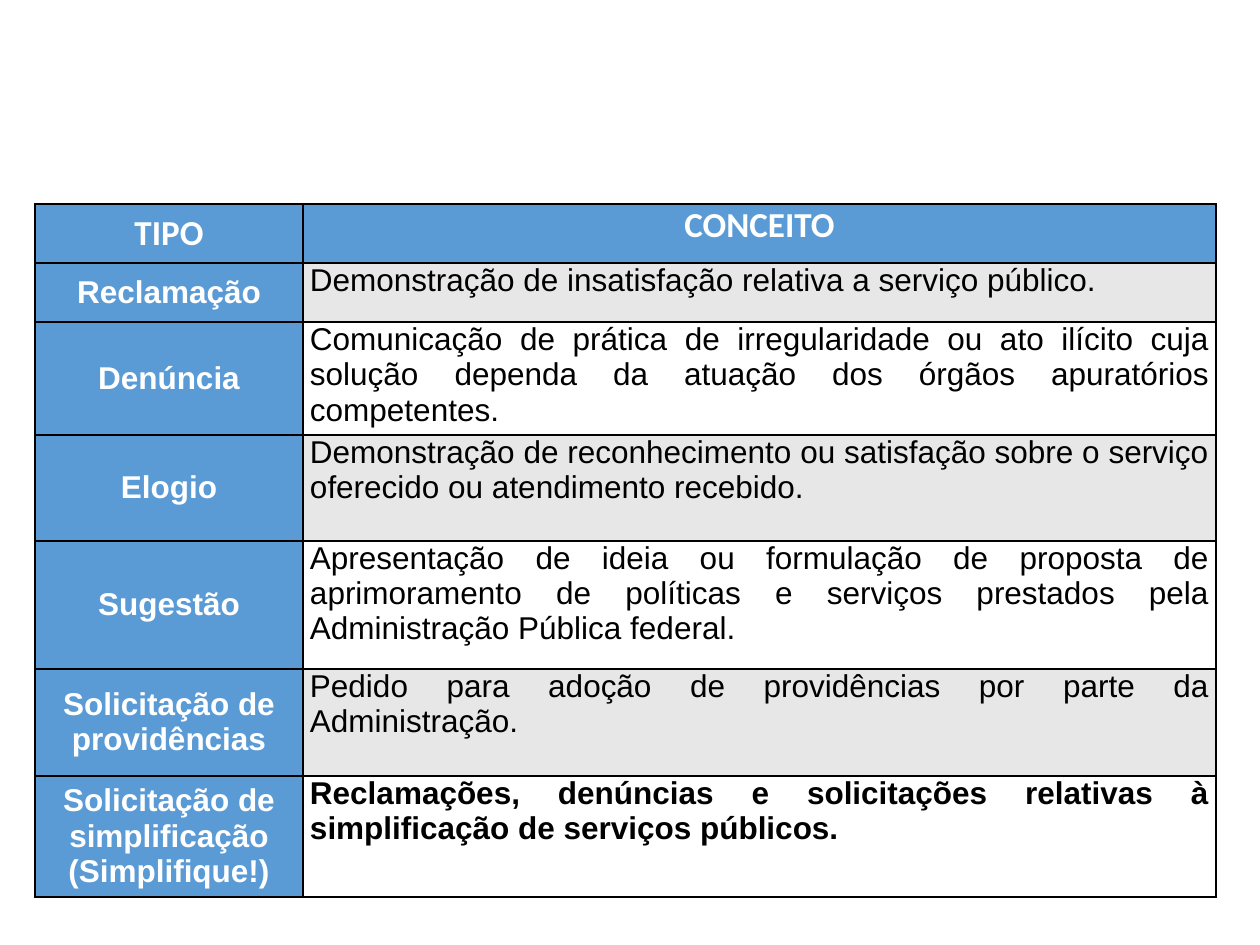
from dataclasses import dataclass

from lxml.etree import SubElement
from pptx import Presentation
from pptx.dml.color import RGBColor as Color
from pptx.enum.text import MSO_ANCHOR as Anchor, PP_ALIGN as Align
from pptx.oxml.ns import qn
from pptx.util import Pt

PX = 914400 // 126


@dataclass(frozen=True)
class Theme:
    blue: str = "5B9BD5"
    gray: str = "E7E7E7"
    white: str = "FFFFFF"
    black: str = "000000"
    head_font: str = "Calibri"
    body_font: str = "Arial"
    head_size: int = 20
    body_size: int = 18


theme = Theme()

# Wording: type, concept
ROWS = [
    ("TIPO", "CONCEITO"),
    ("Reclamação", "Demonstração de insatisfação relativa a serviço público."),
    ("Denúncia", "Comunicação de prática de irregularidade ou ato ilícito cuja "
     "solução dependa da atuação dos órgãos apuratórios competentes."),
    ("Elogio", "Demonstração de reconhecimento ou satisfação sobre o serviço "
     "oferecido ou atendimento recebido."),
    ("Sugestão", "Apresentação de ideia ou formulação de proposta de aprimoramento "
     "de políticas e serviços prestados pela Administração Pública federal."),
    ("Solicitação de providências",
     "Pedido para adoção de providências por parte da Administração."),
    ("Solicitação de simplificação (Simplifique!)",
     "Reclamações, denúncias e solicitações relativas à simplificação de "
     "serviços públicos."),
]
COLUMN_WIDTHS = [268, 913]
ROW_HEIGHTS = [59, 59, 113, 106, 128, 107, 121]


def add_borders(cell):
    props = cell._tc.get_or_add_tcPr()
    for position, side in enumerate(("a:lnL", "a:lnR", "a:lnT", "a:lnB")):
        line = SubElement(props, qn(side), w=str(Pt(1)))
        fill = SubElement(line, qn("a:solidFill"))
        SubElement(fill, qn("a:srgbClr"), val=theme.black)
        props.remove(line)
        props.insert(position, line)


# Page
deck = Presentation()
deck.slide_width, deck.slide_height = 1260 * PX, 945 * PX
page = deck.slides.add_slide(deck.slide_layouts[6])

# Table grid
table = page.shapes.add_table(
    len(ROWS), len(COLUMN_WIDTHS), 35 * PX, 204 * PX,
    sum(COLUMN_WIDTHS) * PX, sum(ROW_HEIGHTS) * PX).table
for column, width in zip(table.columns, COLUMN_WIDTHS):
    column.width = width * PX
for row, height in zip(table.rows, ROW_HEIGHTS):
    row.height = height * PX

# Cells
for row_index, texts in enumerate(ROWS):
    is_head = row_index == 0
    for column_index, text in enumerate(texts):
        is_type = column_index == 0
        is_label = is_head or is_type
        cell = table.cell(row_index, column_index)
        cell.margin_left = cell.margin_right = 7 * PX
        cell.margin_top = cell.margin_bottom = 0
        cell.vertical_anchor = Anchor.MIDDLE if is_type else Anchor.TOP

        band = theme.gray if row_index % 2 else theme.white
        cell.fill.solid()
        cell.fill.fore_color.rgb = Color.from_string(theme.blue if is_label else band)
        add_borders(cell)

        para = cell.text_frame.paragraphs[0]
        para.text = text
        para.alignment = Align.CENTER if is_label else Align.JUSTIFY
        font = para.runs[0].font
        font.name = theme.head_font if is_head else theme.body_font
        font.size = Pt(theme.head_size if is_head else theme.body_size)
        font.bold = is_label or row_index == len(ROWS) - 1
        font.color.rgb = Color.from_string(theme.white if is_label else theme.black)

deck.save("out.pptx")
